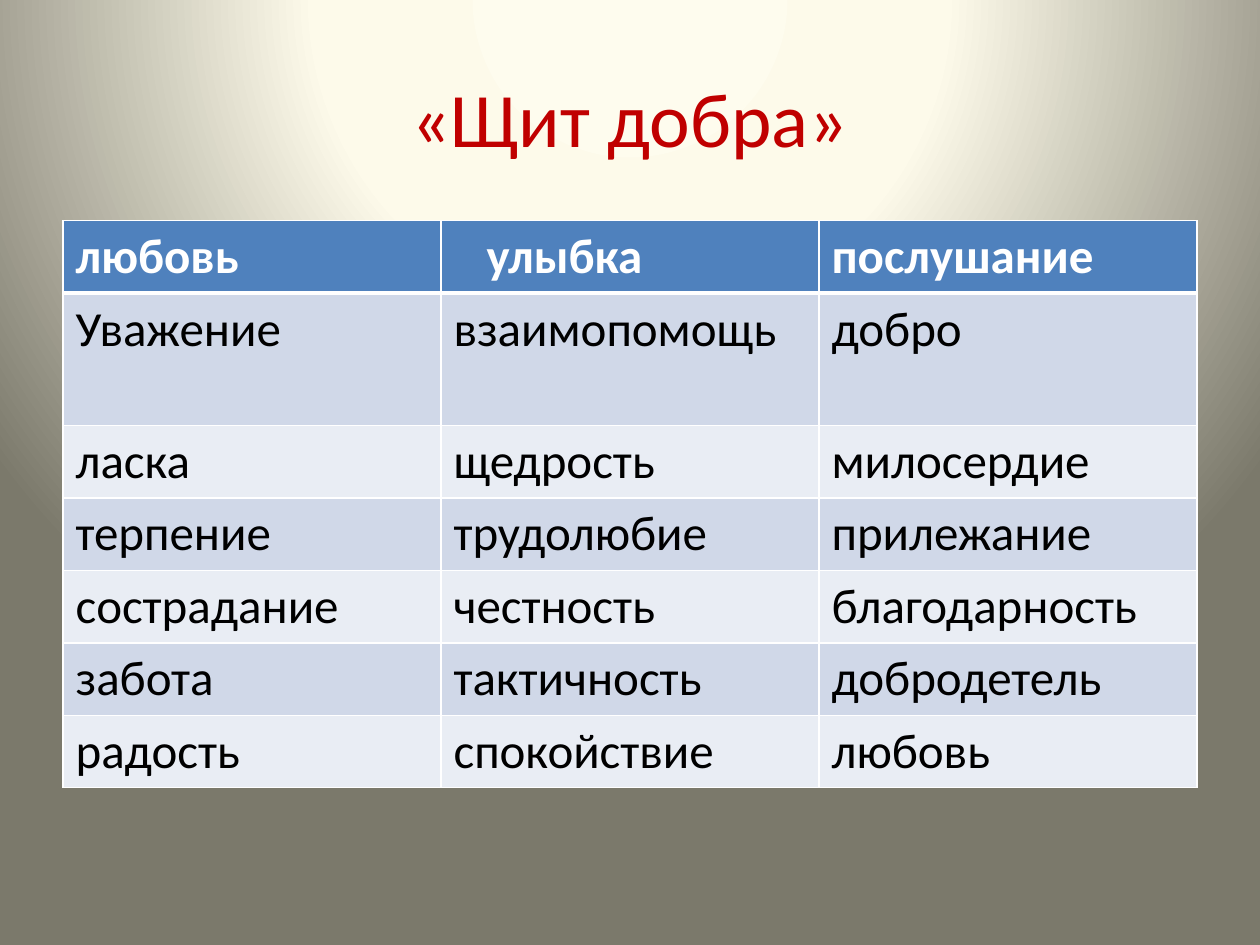
from dataclasses import dataclass

from pptx import Presentation
from pptx import oxml
from pptx import util as u
from pptx.dml import color
from pptx.enum import text
from pptx.oxml import ns


@dataclass(frozen=True)
class Theme:
    font: str = "Calibri"
    title_size: int = 44
    cell_size: int = 28
    title: str = "C00000"
    header_text: str = "FFFFFF"
    body_text: str = "000000"
    header_fill: str = "4F81BD"
    bands: tuple = ("D0D8E8", "E9EDF4")
    border: str = "FFFFFF"
    thin: int = 1
    thick: int = 3
    backdrop: tuple = ((0, "FEFCEE"), (40, "FDFAEA"), (100, "7B796B"))


@dataclass(frozen=True)
class Box:
    """Left, top, width and height in centimetres."""
    left: float
    top: float
    width: float
    height: float

    def lengths(self):
        return [u.Cm(n) for n in (self.left, self.top, self.width, self.height)]


THEME = Theme()
WORDS = (
    ("любовь", "улыбка", "послушание"),
    ("Уважение", "взаимопомощь", "добро"),
    ("ласка", "щедрость", "милосердие"),
    ("терпение", "трудолюбие", "прилежание"),
    ("сострадание", "честность", "благодарность"),
    ("забота", "тактичность", "добродетель"),
    ("радость", "спокойствие", "любовь"),
)
TALL_ROW, TALL_HEIGHT = 1, 2.67
INDENTED_CELL, INDENT = (0, 1), 0.92


def add_span(para, words, size, rgb, bold=False):
    span = para.add_run()
    span.text = words
    span.font.name = THEME.font
    span.font.size = u.Pt(size)
    span.font.bold = bold
    span.font.color.rgb = color.RGBColor.from_string(rgb)


def set_backdrop(page):
    """Radial gradient centred above the page."""
    stops = "".join(
        f'<a:gs pos="{percent * 1000}"><a:srgbClr val="{rgb}"/></a:gs>'
        for percent, rgb in THEME.backdrop)
    backdrop = oxml.parse_xml(
        f'<p:bg {ns.nsdecls("p", "a")}><p:bgPr><a:gradFill rotWithShape="1">'
        f'<a:gsLst>{stops}</a:gsLst><a:path path="circle">'
        '<a:fillToRect l="50000" t="-80000" r="50000" b="180000"/></a:path>'
        '</a:gradFill><a:effectLst/></p:bgPr></p:bg>')
    page.element.cSld.insert(0, backdrop)


def add_title(page, box, words):
    frame = page.shapes.add_textbox(*box.lengths()).text_frame
    frame.word_wrap = True
    frame.vertical_anchor = text.MSO_ANCHOR.MIDDLE
    para = frame.paragraphs[0]
    para.alignment = text.PP_ALIGN.CENTER
    add_span(para, words, THEME.title_size, THEME.title)


def set_borders(cell, row):
    """White lines, with a thick one below the header."""
    widths = {
        "lnL": THEME.thin,
        "lnR": THEME.thin,
        "lnT": THEME.thick if row == 1 else THEME.thin,
        "lnB": THEME.thick if row == 0 else THEME.thin,
    }
    properties = cell._tc.get_or_add_tcPr()
    for place, (side, width) in enumerate(widths.items()):
        properties.insert(place, oxml.parse_xml(
            f'<a:{side} {ns.nsdecls("a")} w="{u.Pt(width)}"><a:solidFill>'
            f'<a:srgbClr val="{THEME.border}"/></a:solidFill></a:{side}>'))


def add_word_table(page, box, words):
    table = page.shapes.add_table(len(words), len(words[0]), *box.lengths()).table
    for column in table.columns:
        column.width = u.Cm(box.width / len(words[0]))
    even_height = (box.height - TALL_HEIGHT) / (len(words) - 1)
    for row, entries in enumerate(words):
        table.rows[row].height = u.Cm(TALL_HEIGHT if row == TALL_ROW else even_height)
        header = row == 0
        fill = THEME.header_fill if header else THEME.bands[(row - 1) % 2]
        ink = THEME.header_text if header else THEME.body_text
        for col, entry in enumerate(entries):
            cell = table.cell(row, col)
            cell.fill.solid()
            cell.fill.fore_color.rgb = color.RGBColor.from_string(fill)
            set_borders(cell, row)
            if (row, col) == INDENTED_CELL:
                cell.margin_left = u.Cm(INDENT)
            add_span(cell.text_frame.paragraphs[0], entry, THEME.cell_size, ink, header)


def main():
    deck = Presentation()
    deck.slide_width, deck.slide_height = u.Cm(25.4), u.Cm(19.05)
    page = deck.slides.add_slide(deck.slide_layouts[6])
    set_backdrop(page)
    add_title(page, Box(1.27, 0.76, 22.86, 3.18), "«Щит добра»")
    add_word_table(page, Box(1.27, 4.45, 22.86, 11.43), WORDS)
    deck.save("out.pptx")


if __name__ == "__main__":
    main()
